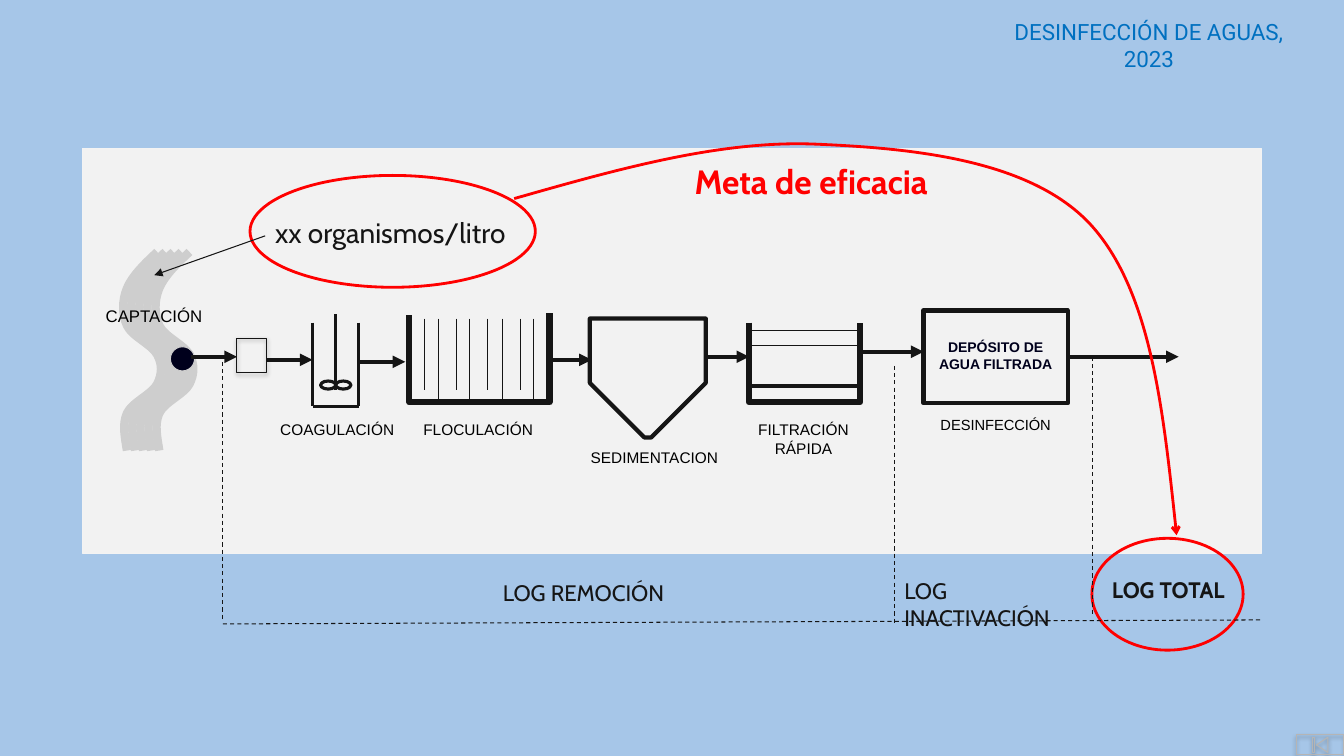
from dataclasses import dataclass
from typing import Any, NamedTuple

from lxml.etree import SubElement
from pptx import Presentation
from pptx.dml.color import RGBColor
from pptx.enum.dml import MSO_LINE
from pptx.enum.shapes import MSO_CONNECTOR, MSO_SHAPE as SHP
from pptx.enum.text import MSO_ANCHOR, MSO_AUTO_SIZE, PP_ALIGN
from pptx.oxml.ns import qn
from pptx.util import Inches, Pt


@dataclass(frozen=True)
class Theme:
    """Colours, fonts, type sizes and line widths of the slide."""
    sky: str = "A6C6E8"
    panel: str = "F2F2F2"
    panel_edge: str = "F3F3F3"
    button: str = "B5B5B5"
    river: str = "CECECE"
    ink: str = "151515"
    black: str = "000000"
    navy: str = "00001C"
    red: str = "FF0000"
    blue: str = "0070C0"
    label_font: str = "Arial"
    body_font: str = "Cabin"
    head_font: str = "Roboto"
    goal_size: float = 24
    source_size: float = 20
    body_size: float = 16
    intake_size: float = 12
    label_size: float = 11
    outlet_size: float = 10.5
    tank_size: float = 10
    hair: float = 0.75
    goal: float = 2
    medium: float = 2.25
    flow: float = 3
    wall: float = 4.5
    current: float = 6


T = Theme()
Point = tuple[float, float]


class Label(NamedTuple):
    """A text with its place and type."""
    text: str
    box: tuple[float, float, float, float]
    size: float = T.label_size
    font: str = T.label_font
    color: str = T.black
    bold: bool = False
    align: Any = PP_ALIGN.LEFT


class Outline(NamedTuple):
    """A preset shape with its place, line and fill."""
    kind: Any
    box: tuple[float, float, float, float]
    width: float = T.hair
    color: str = T.ink
    fill: str | None = None
    shadow: bool = False


class Segment(NamedTuple):
    """A straight line that may be dashed or end in an arrowhead."""
    start: Point
    end: Point
    width: float = T.hair
    dashed: bool = False
    head: str | None = None


HEADER = Label("DESINFECCIÓN DE AGUAS, 2023", (9.81, 0.13, 3.17, 0.37), T.body_size,
               T.head_font, T.blue, align=PP_ALIGN.CENTER)

LABELS = [
    Label("COAGULACIÓN", (2.68, 4.12, 1.42, 0.29)),
    Label("FLOCULACIÓN", (4.1, 4.12, 1.47, 0.29)),
    Label("SEDIMENTACION", (5.76, 4.4, 1.66, 0.29)),
    Label("FILTRACIÓN RÁPIDA", (7.26, 4.12, 1.42, 0.47), align=PP_ALIGN.CENTER),
    Label("DESINFECCIÓN", (9.23, 4.08, 1.34, 0.28), T.outlet_size),
    Label("CAPTACIÓN", (0.95, 2.98, 1.26, 0.3), T.intake_size),
    Label("DEPÓSITO DE AGUA FILTRADA", (9.16, 3.31, 1.43, 0.44), T.tank_size,
          color=T.navy, bold=True, align=PP_ALIGN.CENTER),
    Label("LOG REMOCIÓN", (4.89, 5.7, 2.28, 0.37), T.body_size, T.body_font, T.ink),
    Label("xx organismos/litro", (2.63, 2.09, 2.83, 0.44), T.source_size, T.body_font, T.ink),
    Label("LOG INACTIVACIÓN", (8.87, 5.68, 2.08, 0.37), T.body_size, T.body_font, T.ink),
    Label("LOG TOTAL", (10.93, 5.67, 1.5, 0.37), T.body_size, T.body_font, T.ink, True),
    Label("Meta de eficacia", (6.79, 1.55, 2.83, 0.5), T.goal_size, T.body_font, T.red, True),
]

BACKDROP = [
    Outline(SHP.ACTION_BUTTON_BEGINNING, (12.86, 7.29, 0.47, 0.2), color=T.button, shadow=True),
    Outline(SHP.RECTANGLE, (0.82, 1.47, 11.69, 4.02), color=T.panel_edge, fill=T.panel),
]

OUTLINES = [
    Outline(SHP.OVAL, (1.69, 3.44, 0.24, 0.24), color=T.river, fill=T.navy),
    Outline(SHP.RECTANGLE, (2.35, 3.36, 0.29, 0.34), shadow=True),
    Outline(SHP.OVAL, (3.18, 3.78, 0.15, 0.08), T.medium),
    Outline(SHP.OVAL, (3.33, 3.78, 0.15, 0.08), T.medium),
    Outline(SHP.RECTANGLE, (7.43, 3.28, 1.1, 0.55), 1),
    Outline(SHP.RECTANGLE, (7.43, 3.83, 1.1, 0.16), T.medium),
    Outline(SHP.RECTANGLE, (7.43, 3.43, 1.1, 0.39)),
    Outline(SHP.RECTANGLE, (9.16, 3.08, 1.43, 0.92), T.flow),
    Outline(SHP.OVAL, (2.48, 1.74, 2.83, 1.11), T.goal, T.red),
    Outline(SHP.OVAL, (10.83, 5.34, 1.5, 1.11), T.goal, T.red),
]

FLOWS = [(1.89, 2.35, 3.54), (2.65, 3.1, 3.57), (3.57, 4.02, 3.59), (5.46, 5.87, 3.57),
         (7.01, 7.43, 3.54), (8.5, 9.16, 3.49), (10.58, 11.69, 3.54)]
BAFFLES = [4.21, 4.35, 4.53, 4.66, 4.84, 4.98, 5.16, 5.29]
LIMITS = [(2.21, 3.59), (8.87, 3.63), (10.84, 3.54)]
SEGMENTS = [
    *(Segment((x1, y), (x2, y), T.flow, head="triangle") for x1, x2, y in FLOWS),
    *(Segment((x, 3.16), (x, (3.87, 3.99)[i % 2])) for i, x in enumerate(BAFFLES)),
    *(Segment((x, y), (x, y + 2.56), dashed=True) for x, y in LIMITS),
    Segment((2.21, 6.19), (12.51, 6.15), dashed=True),
    Segment((2.63, 2.34), (1.53, 2.73), head="triangle"),
    *(Segment((x, 3.2), (x, 4.03), T.medium) for x in (3.1, 3.56)),
    Segment((3.1, 4.03), (3.56, 4.03), T.medium),
    Segment((3.33, 3.87), (3.33, 3.12), T.medium),
]

FLOCCULATOR = [(4.06, 3.13), (4.06, 3.99), (5.45, 3.99), (5.45, 3.11)]
FILTER = [(7.43, 3.2), (7.43, 3.99), (8.53, 3.99), (8.53, 3.2)]
BANK = [(1.56, 2.5), (1.43, 2.62), (1.31, 2.74), (1.26, 2.86), (1.21, 2.98), (1.21, 3.12),
        (1.26, 3.23), (1.31, 3.34), (1.51, 3.42), (1.56, 3.52), (1.61, 3.61), (1.61, 3.71),
        (1.56, 3.81), (1.51, 3.91), (1.31, 3.99), (1.26, 4.1), (1.21, 4.21), (1.24, 4.34),
        (1.26, 4.47)]
GOAL_CURVE = [(5.1, 1.97), (6.12, 1.68), (7.14, 1.39), (8.09, 1.43), (9.04, 1.47),
              (10.21, 1.58), (10.81, 2.22), (11.41, 2.87), (11.54, 4.09), (11.67, 5.31)]


def apply(obj: Any, values: dict[str, Any]) -> None:
    """Set each named attribute on an object."""
    for name, value in values.items():
        setattr(obj, name, value)


def set_line(sp: Any, color: str, width: float, head: str | None = None) -> None:
    """Give a shape or connector its line and arrowhead."""
    sp.line.fill.solid()
    sp.line.fill.fore_color.rgb = RGBColor.from_string(color)
    sp.line.width = Pt(width)
    if head:
        SubElement(sp._element.spPr.find(qn("a:ln")), qn("a:tailEnd"), type=head)


def write(sp: Any, label: Label) -> None:
    """Fill a text shape with a label."""
    tf = sp.text_frame
    apply(tf, {"word_wrap": True, "auto_size": MSO_AUTO_SIZE.NONE,
               "vertical_anchor": MSO_ANCHOR.TOP})
    p = tf.paragraphs[0]
    p.alignment = label.align
    r = p.add_run()
    r.text = label.text
    apply(r.font, {"name": label.font, "size": Pt(label.size), "bold": label.bold})
    r.font.color.rgb = RGBColor.from_string(label.color)


def draw_outline(shapes: Any, item: Outline) -> Any:
    """Draw a preset shape, with a soft shadow if it has one."""
    sp = shapes.add_shape(item.kind, *map(Inches, item.box))
    sp.shadow.inherit = False
    sp.fill.background()
    if item.fill:
        sp.fill.solid()
        sp.fill.fore_color.rgb = RGBColor.from_string(item.fill)
    set_line(sp, item.color, item.width)
    if item.shadow:
        shade = SubElement(sp._element.spPr.find(qn("a:effectLst")), qn("a:outerShdw"),
                           blurRad=str(Pt(3.1)), dist=str(Pt(1.6)), dir="5400000")
        color = SubElement(shade, qn("a:srgbClr"), val=T.black)
        SubElement(color, qn("a:alpha"), val="38000")
    return sp


def draw_segment(shapes: Any, item: Segment) -> None:
    """Draw a straight connector."""
    sp = shapes.add_connector(MSO_CONNECTOR.STRAIGHT, *map(Inches, item.start + item.end))
    set_line(sp, T.ink, item.width, item.head)
    if item.dashed:
        sp.line.dash_style = MSO_LINE.DASH
    SubElement(sp._element.spPr, qn("a:effectLst"))


def draw_path(shapes: Any, points: list[Point], color: str, width: float,
              head: str | None = None, curved: bool = False) -> None:
    """Draw an open unfilled outline of straight sides or cubic curves."""
    start, *rest = [(Inches(x), Inches(y)) for x, y in points]
    builder = shapes.build_freeform(*start)
    builder.add_line_segments(rest, close=False)
    sp = builder.convert_to_shape()
    sp.shadow.inherit = False
    sp.fill.background()
    set_line(sp, color, width, head)
    if curved:
        outline = next(sp._element.iter(qn("a:path")))
        sides = outline.findall(qn("a:lnTo"))
        for i in range(0, len(sides), 3):
            curve = SubElement(outline, qn("a:cubicBezTo"))
            for side in sides[i:i + 3]:
                curve.append(side[0])
                outline.remove(side)


def main() -> None:
    """Build and save the water treatment slide."""
    prs = Presentation()
    apply(prs, {"slide_width": Inches(13.33), "slide_height": Inches(7.5)})
    s = prs.slides.add_slide(prs.slide_layouts[5])
    s.background.fill.solid()
    s.background.fill.fore_color.rgb = RGBColor.from_string(T.sky)
    title = s.shapes.title
    apply(title, dict(zip(("left", "top", "width", "height"), map(Inches, HEADER.box))))
    write(title, HEADER)
    for item in BACKDROP:
        draw_outline(s.shapes, item)
    for i in range(5):
        bank = [(x + 0.08 * i, y) for x, y in BANK]
        draw_path(s.shapes, bank, T.river, T.current, curved=True)
    for item in OUTLINES:
        draw_outline(s.shapes, item)
    settler = draw_outline(s.shapes, Outline(SHP.SNIP_2_SAME_RECTANGLE,
                                             (5.85, 3.16, 1.15, 1.18), T.flow))
    settler.rotation = 180
    settler.adjustments[0], settler.adjustments[1] = 0.471, 0
    for tank in (FLOCCULATOR, FILTER):
        draw_path(s.shapes, tank, T.ink, T.wall)
    for item in SEGMENTS:
        draw_segment(s.shapes, item)
    draw_path(s.shapes, GOAL_CURVE, T.red, T.goal, "arrow", curved=True)
    for label in LABELS:
        write(s.shapes.add_textbox(*map(Inches, label.box)), label)
    prs.save("out.pptx")


if __name__ == "__main__":
    main()
